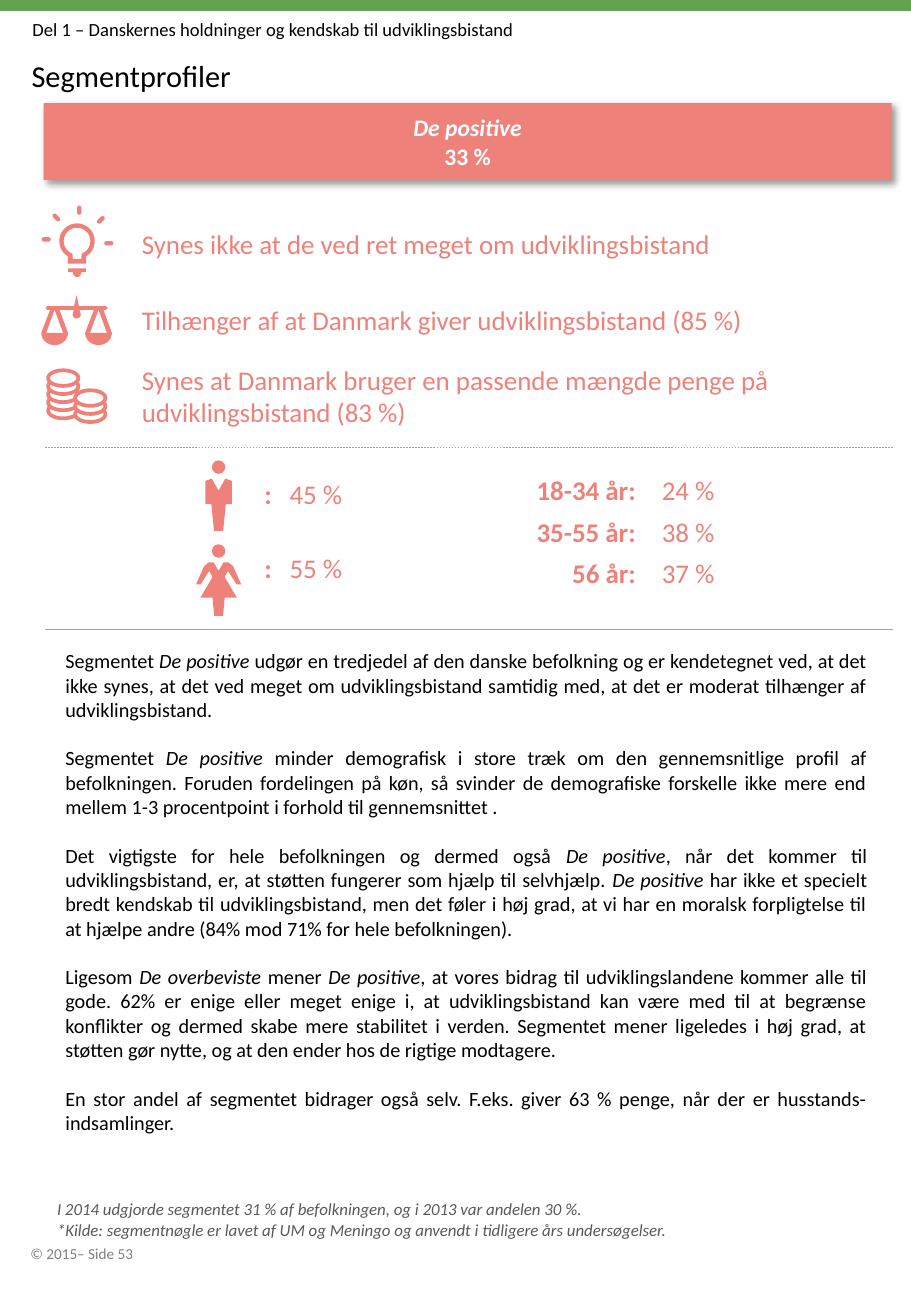
import math

import lxml.etree
import pptx
import pptx.dml.color
import pptx.enum.dml
import pptx.enum.shapes
import pptx.enum.text
import pptx.oxml
import pptx.oxml.ns
import pptx.util

Pt = pptx.util.Pt
ShapeType = pptx.enum.shapes.MSO_SHAPE
Align = pptx.enum.text.PP_ALIGN
Anchor = pptx.enum.text.MSO_ANCHOR
CORAL = "EE827A"
BLACK = "000000"
BODY = [
    "Segmentet |De positive |udgør en tredjedel af den danske befolkning og er kendetegnet ved, at det ikke synes, at det ved meget om udviklingsbistand samtidig med, at det er moderat tilhænger af udviklingsbistand.",
    "Segmentet |De positive| minder demografisk i store træk om den gennemsnitlige profil af befolkningen. Foruden fordelingen på køn, så svinder de demografiske forskelle ikke mere end mellem 1-3 procentpoint i forhold til gennemsnittet .",
    "Det vigtigste for hele befolkningen og dermed også |De positive|, når det kommer til udviklingsbistand, er, at støtten fungerer som hjælp til selvhjælp. |De positive |har ikke et specielt bredt kendskab til udviklingsbistand, men det føler i høj grad, at vi har en moralsk forpligtelse til at hjælpe andre (84% mod 71% for hele befolkningen).",
    "Ligesom |De overbeviste| mener |De positive|, at vores bidrag til udviklingslandene kommer alle til gode. 62% er enige eller meget enige i, at udviklingsbistand kan være med til at begrænse konflikter og dermed skabe mere stabilitet i verden. Segmentet mener ligeledes i høj grad, at støtten gør nytte, og at den ender hos de rigtige modtagere.",
    "En stor andel af segmentet bidrager også selv. F.eks. giver 63 % penge, når der er husstands-indsamlinger.",
]


def rgb(value):
    return pptx.dml.color.RGBColor.from_string(value)


def format_run(run, size, color, bold=False, italic=False):
    run.font.name = "Calibri"
    run.font.size = Pt(size)
    run.font.color.rgb = rgb(color)
    run.font.bold = bold
    run.font.italic = italic


def fill_text(shape, lines, size, color, bold=False, italic=False,
              align=Align.LEFT, anchor=Anchor.TOP, insets=(7.2, 3.6, 7.2, 3.6)):
    frame = shape.text_frame
    frame.text = "\n".join(lines)
    frame.word_wrap = True
    frame.auto_size = pptx.enum.text.MSO_AUTO_SIZE.NONE
    frame.vertical_anchor = anchor
    frame.margin_left, frame.margin_top, frame.margin_right, frame.margin_bottom = map(Pt, insets)
    for paragraph in frame.paragraphs:
        paragraph.alignment = align
        for run in paragraph.runs:
            format_run(run, size, color, bold, italic)
    return frame


def add_text(slide, box, lines, size, color, **options):
    return fill_text(slide.shapes.add_textbox(*map(Pt, box)), lines, size, color, **options)


def add_filled(slide, kind, box, color):
    shape = slide.shapes.add_shape(kind, *map(Pt, box))
    shape.shadow.inherit = False
    shape.fill.solid()
    shape.fill.fore_color.rgb = rgb(color)
    shape.line.fill.background()
    return shape


def add_outline(slide, origin, contours):
    left, top = origin
    contours = [[(Pt(left + x), Pt(top + y)) for x, y in contour] for contour in contours]
    builder = slide.shapes.build_freeform(*contours[0][0], scale=1.0)
    for index, contour in enumerate(contours):
        if index:
            builder.move_to(*contour[0])
        builder.add_line_segments(contour[1:], close=True)
    shape = builder.convert_to_shape()
    shape.shadow.inherit = False
    shape.fill.solid()
    shape.fill.fore_color.rgb = rgb(CORAL)
    shape.line.fill.background()
    return shape


def arc(x, y, radius_x, radius_y, start, end, steps=32):
    angles = [math.radians(start + (end - start) * step / steps) for step in range(steps + 1)]
    return [(x + radius_x * math.cos(angle), y + radius_y * math.sin(angle)) for angle in angles]


def add_bulb(slide, origin):
    left, top = origin
    glass = arc(21.2, 21.2, 10.5, 10.5, 121, 419) + [(26.6, 34.6), (15.8, 34.6)]
    hollow = arc(21.2, 21.2, 7.9, 7.9, 110, 430) + [(23.8, 31.7), (18.7, 31.7)]
    cap = [(15.8, 37.4), (26.6, 37.4), (26.6, 39.6)] + arc(21.2, 39.6, 2.5, 2.9, 0, 180) + [(15.8, 39.6)]
    parts = [add_outline(slide, origin, [glass, hollow]), add_outline(slide, origin, [cap])]
    for x, y, angle in [(2.9, 20.2, 0), (8.9, 7.2, 45), (22.5, 2.9, 90), (35.3, 8.6, 135), (40, 22.5, 0)]:
        ray = add_filled(slide, ShapeType.ROUNDED_RECTANGLE, (left + x - 2.7, top + y - 1.3, 5.4, 2.6), CORAL)
        ray.adjustments[0] = 0.5
        ray.rotation = angle
        parts.append(ray)
    slide.shapes.add_group_shape(parts)


def add_scales(slide, origin):
    beam = [(3.5, 6.5), (19.4, 6.5), (20.9, 0), (22.3, 6.5), (38.3, 6.5), (39.4, 7.5), (38.3, 8.6), (22.7, 8.6)]
    beam += arc(21, 11.5, 2.4, 2.2, 0, 180) + [(19.2, 8.6), (3.5, 8.6), (2.5, 7.5)]
    pan = [(5.2, 8.6), (10.8, 8.6)] + arc(7.9, 22.3, 7.9, 7.2, 0, 180)
    opening = [(7.9, 8.6), (12.9, 22.3), (2.9, 22.3)]
    contours = [beam]
    for offset in (0, 26):
        contours += [[(x + offset, y) for x, y in contour] for contour in (pan, opening)]
    add_outline(slide, origin, contours)


def add_coins(slide, origin):
    left, top = origin
    parts = []
    for x, base, count in [(0, 19.4, 5), (16, 21.6, 3)]:
        for level in range(count):
            coin = add_filled(slide, ShapeType.OVAL,
                              (left + x + 1.1, top + base - 4.8 * level + 1.1, 18, 9.3), "FFFFFF")
            coin.line.color.rgb = rgb(CORAL)
            coin.line.width = Pt(2.2)
            parts.append(coin)
    slide.shapes.add_group_shape(parts)


def add_person(slide, center, top, half):
    head = add_filled(slide, ShapeType.OVAL, (center - 4, top, 8, 8), CORAL)
    mirrored = [(-x, y) for x, y in reversed(half[1:])]
    slide.shapes.add_group_shape([head, add_outline(slide, (center, top), [half + mirrored])])


def add_rule(slide, y, color, dash=None):
    rule = slide.shapes.add_connector(pptx.enum.shapes.MSO_CONNECTOR.STRAIGHT, Pt(26.6), Pt(y), Pt(529.2), Pt(y))
    rule.line.color.rgb = rgb(color)
    rule.line.width = Pt(0.25)
    rule.line.dash_style = dash
    lxml.etree.SubElement(rule._element.spPr, pptx.oxml.ns.qn("a:effectLst"))


def add_heading(slide):
    add_filled(slide, ShapeType.RECTANGLE, (0, 0, 540, 6.5), "64A252")
    add_text(slide, (12.2, 7.2, 427, 20.9), ["Del 1 – Danskernes holdninger og kendskab til udviklingsbistand"], 11, BLACK)
    title = slide.shapes.title
    title.left, title.top, title.width, title.height = map(Pt, (10.8, 29.5, 518.4, 25.9))
    fill_text(title, ["Segmentprofiler"], 18, BLACK, insets=(7.9, 4.3, 7.9, 4.3))


def add_banner(slide, box):
    banner = add_filled(slide, ShapeType.RECTANGLE, box, CORAL)
    frame = fill_text(banner, ["De positive", "33 %"], 14, "FFFFFF", bold=True,
                      align=Align.CENTER, anchor=Anchor.MIDDLE)
    frame.paragraphs[0].runs[0].font.italic = True
    effects = banner._element.spPr.find(pptx.oxml.ns.qn("a:effectLst"))
    effects.append(pptx.oxml.parse_xml(
        '<a:outerShdw xmlns:a="http://schemas.openxmlformats.org/drawingml/2006/main" '
        'blurRad="50800" dist="38100" dir="2700000" algn="tl" rotWithShape="0">'
        '<a:srgbClr val="000000"><a:alpha val="40000"/></a:srgbClr></a:outerShdw>'))


def add_statements(slide):
    statements = [
        (131, 26.6, "Synes ikke at de ved ret meget om udviklingsbistand"),
        (176.4, 26.6, "Tilhænger af at Danmark giver udviklingsbistand (85 %)"),
        (211.7, 46.1, "Synes at Danmark bruger en passende mængde penge på udviklingsbistand (83 %)"),
    ]
    for top, height, statement in statements:
        add_text(slide, (77, top, 456.5, height), [statement], 16, CORAL, anchor=Anchor.MIDDLE)
    add_bulb(slide, (24.5, 121.7))
    add_scales(slide, (24.5, 175))
    add_coins(slide, (27.4, 218.2))


def add_gender(slide, left, top):
    man = [(0, 18), (4, 10.8), (7.9, 12.2), (7.9, 25.9), (4.3, 25.9), (2.7, 41.8)]
    woman = [(0, 15.8), (2.9, 10.8), (5.8, 10.8), (8.6, 13), (13.4, 23.8), (10.6, 23.8),
             (5.6, 15.8), (3.6, 19.4), (10.8, 31.7), (3.6, 31.7), (2.6, 42.5)]
    for row, (half, share, label_top) in enumerate([(man, "45 %", 6.5), (woman, "55 %", 50.4)]):
        add_person(slide, left, top + 49.7 * row, half)
        frame = add_text(slide, (left + 20, top + label_top, 91.4, 26.6), [":\t" + share], 16, CORAL,
                         anchor=Anchor.MIDDLE)
        paragraph = frame.paragraphs[0]
        tabs = lxml.etree.SubElement(paragraph._p.get_or_add_pPr(), pptx.oxml.ns.qn("a:tabLst"))
        lxml.etree.SubElement(tabs, pptx.oxml.ns.qn("a:tab"), pos=str(Pt(15)), algn="l")
        paragraph.text = ":"
        format_run(paragraph.runs[0], 16, CORAL, bold=True)
        run = paragraph.add_run()
        run.text = "\t" + share
        format_run(run, 16, CORAL)


def add_ages(slide, left, top):
    for row, (age, share) in enumerate([("18-34 år:", "24 %"), ("35-55 år:", "38 %"), ("56 år:", "37 %")]):
        y = top + 24.4 * row
        add_text(slide, (left, y, 73, 38.2), [age], 16, CORAL, bold=True, align=Align.RIGHT,
                 anchor=Anchor.MIDDLE, insets=(0, 3.6, 7.2, 3.6))
        add_text(slide, (left + 74.2, y, 83.5, 38.2), [share], 16, CORAL, anchor=Anchor.MIDDLE)


def add_description(slide, box):
    frame = add_text(slide, box, BODY, 12, BLACK, align=Align.JUSTIFY)
    for index, paragraph in enumerate(frame.paragraphs):
        paragraph.space_before = Pt(14.4 if index else 0)
        paragraph.text = ""
        for position, part in enumerate(BODY[index].split("|")):
            run = paragraph.add_run()
            run.text = part
            format_run(run, 12, BLACK, italic=position % 2 == 1)


def add_notes_and_footer(slide):
    insets = (7.9, 4.3, 7.9, 4.3)
    add_text(slide, (25.9, 706.3, 518.4, 32), [
        "I 2014 udgjorde segmentet 31 % af befolkningen, og i 2013 var andelen 30 %.",
        "*Kilde: segmentnøgle er lavet af UM og Meningo og anvendt i tidligere års undersøgelser.",
    ], 10, "595959", italic=True, insets=insets)
    add_text(slide, (10.1, 733, 85.7, 19.4), ["© 2015– Side 53"], 9, "808080", insets=insets)


def main():
    presentation = pptx.Presentation()
    presentation.slide_width, presentation.slide_height = Pt(540), Pt(780)
    slide = presentation.slides.add_slide(presentation.slide_layouts[5])
    add_heading(slide)
    add_banner(slide, (25.9, 61.2, 502.6, 45.4))
    add_statements(slide)
    add_rule(slide, 265, CORAL, pptx.enum.dml.MSO_LINE.DASH)
    add_gender(slide, 129.6, 272.9)
    add_ages(slide, 311, 271.4)
    add_rule(slide, 373, "A6A6A6")
    add_description(slide, (31.7, 380.9, 489.6, 312.5))
    add_notes_and_footer(slide)
    presentation.save("out.pptx")


if __name__ == "__main__":
    main()
